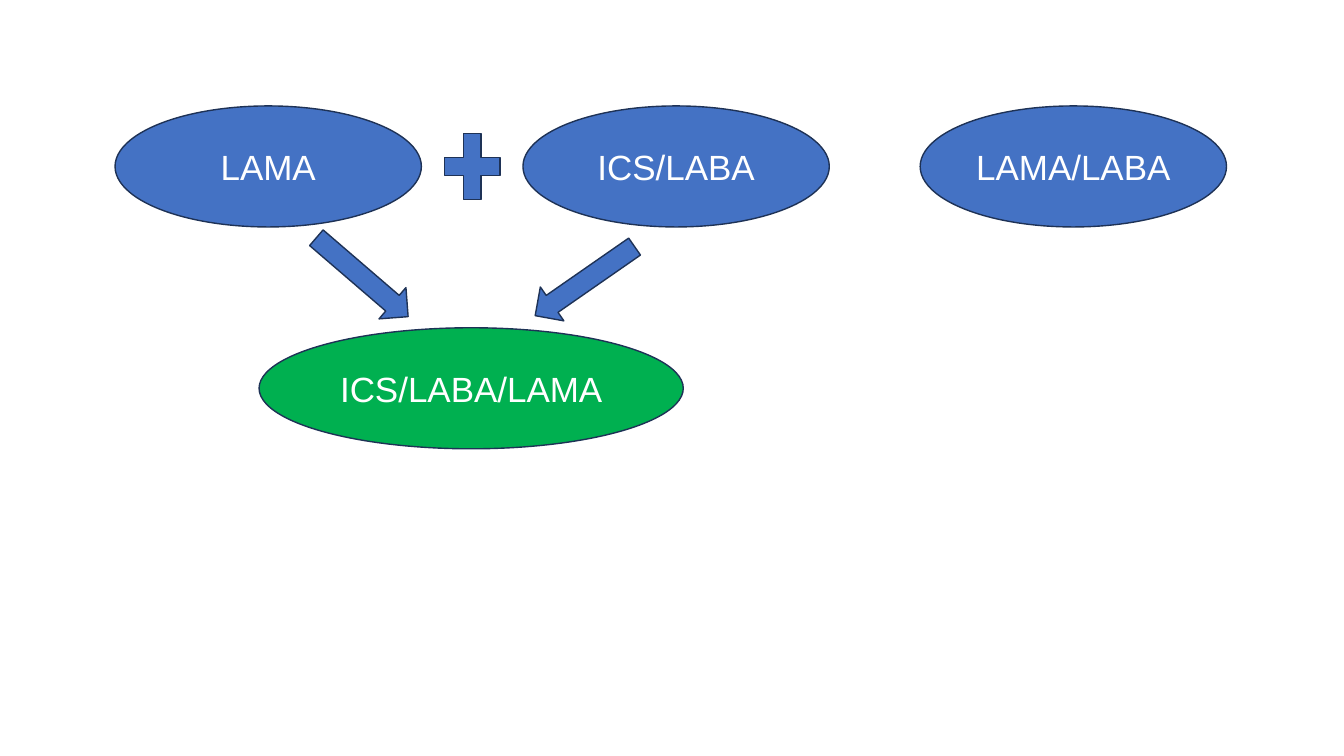
from pptx import Presentation
from pptx.dml.color import RGBColor
from pptx.enum.shapes import MSO_SHAPE
from pptx.enum.text import MSO_ANCHOR, PP_ALIGN
from pptx.util import Cm, Pt

BLUE, GREEN, NAVY, WHITE = "4472C4", "00B050", "1E3256", "FFFFFF"
ROW_TOP, OVAL_W, OVAL_H = 2.67, 7.72, 3.05
ARROW_W, ARROW_H = 1.04, 3.05


def rgb(hex_color):
    return RGBColor.from_string(hex_color)


def add_outlined(kind, left, top, width, height, fill=BLUE):
    """Add a filled preset shape with the thin navy outline; lengths in cm."""
    sp = s.shapes.add_shape(kind, Cm(left), Cm(top), Cm(width), Cm(height))
    sp.shadow.inherit = False
    sp.fill.solid()
    sp.fill.fore_color.rgb = rgb(fill)
    sp.line.color.rgb = rgb(NAVY)
    sp.line.width = Pt(1)
    return sp


prs = Presentation()
prs.slide_width, prs.slide_height = Cm(33.87), Cm(19.05)
s = prs.slides.add_slide(prs.slide_layouts[6])

# Inhaler classes and their combination
ovals = [
    ("LAMA", 2.9, ROW_TOP, OVAL_W, BLUE),
    ("LAMA/LABA", 23.19, ROW_TOP, OVAL_W, BLUE),
    ("ICS/LABA", 13.18, ROW_TOP, OVAL_W, BLUE),
    ("ICS/LABA/LAMA", 6.53, 8.26, 10.69, GREEN),
]
for label, left, top, width, fill in ovals:
    sp = add_outlined(MSO_SHAPE.OVAL, left, top, width, OVAL_H, fill)
    tf = sp.text_frame
    tf.word_wrap = True
    tf.vertical_anchor = MSO_ANCHOR.MIDDLE
    p = tf.paragraphs[0]
    p.text = label
    p.alignment = PP_ALIGN.CENTER
    p.font.name = "Arial"
    p.font.size = Pt(25)
    p.font.color.rgb = rgb(WHITE)

# Arrows leading to the combination
for left, top, angle in [(8.61, 5.46, 310.7), (14.22, 5.56, 55.2)]:
    arrow = add_outlined(MSO_SHAPE.DOWN_ARROW, left, top, ARROW_W, ARROW_H)
    arrow.rotation = angle

add_outlined(MSO_SHAPE.MATH_PLUS, 10.95, 3.07, 1.9, 2.26)

prs.save("out.pptx")
